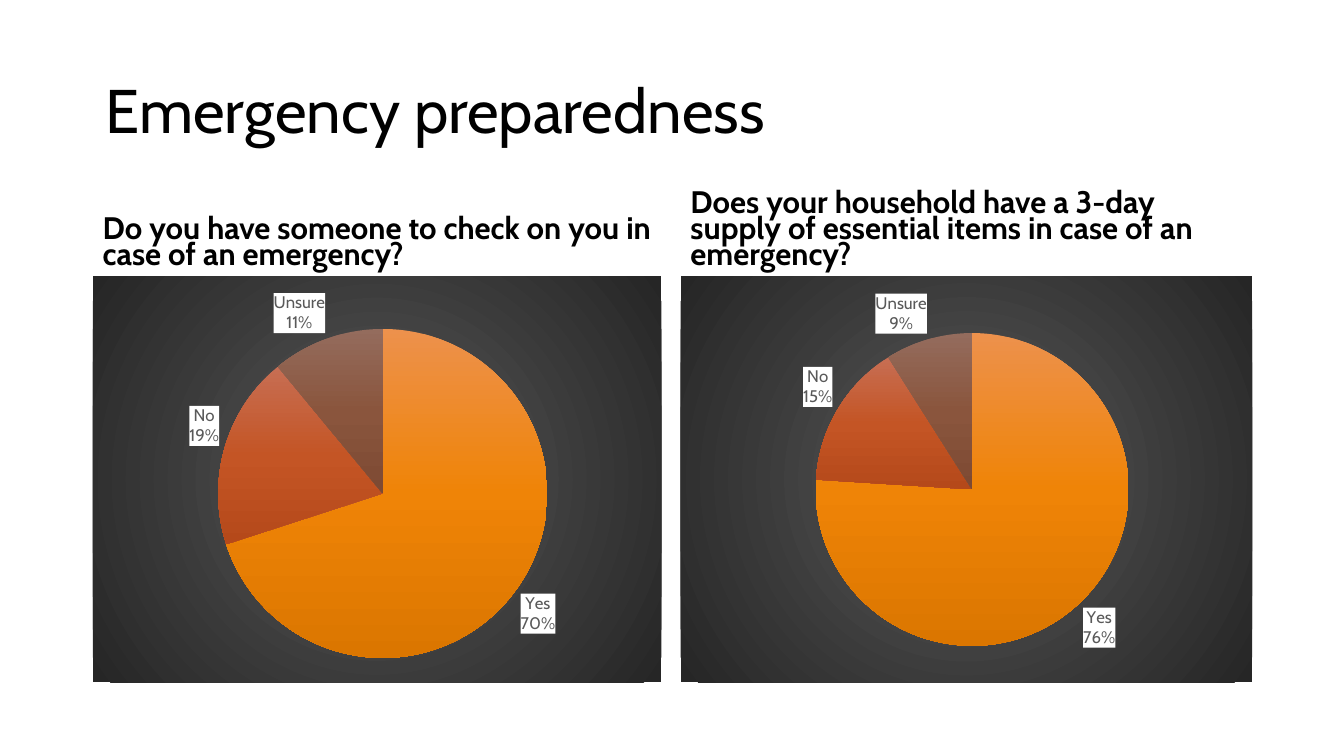
from lxml import etree
from pptx import Presentation
from pptx.chart.data import CategoryChartData
from pptx.dml.color import RGBColor
from pptx.enum.chart import XL_CHART_TYPE, XL_LABEL_POSITION
from pptx.enum.text import MSO_ANCHOR
from pptx.oxml import parse_xml
from pptx.util import Inches, Pt

PIE = XL_CHART_TYPE.PIE
OUTSIDE_END = XL_LABEL_POSITION.OUTSIDE_END
MIDDLE = MSO_ANCHOR.MIDDLE
BOTTOM = MSO_ANCHOR.BOTTOM
FONT = "Cabin"
NAMESPACES = (
    'xmlns:a="http://schemas.openxmlformats.org/drawingml/2006/main" '
    'xmlns:c="http://schemas.openxmlformats.org/drawingml/2006/chart"'
)
LINEAR = '<a:lin ang="5400000" scaled="0"/>'
CIRCLE = '<a:path path="circle"><a:fillToRect l="50000" t="50000" r="50000" b="50000"/></a:path>'
SLICE_COLORS = [
    ["ED914C", "EF8407", "DB7600"],
    ["C76E53", "C45525", "B5491A"],
    ["946C5D", "8A553D", "7D4A33"],
]
PANELS = [
    {
        "question": "Do you have someone to check on you in case of an emergency?",
        "left": 0.92, "width": 5.64, "values": (70, 19, 11),
        "plot": {"x": 0.22, "y": 0.13, "w": 0.58, "h": 0.81},
    },
    {
        "question": "Does your household have a 3-day supply of essential items in case of an emergency?",
        "left": 6.75, "width": 5.67, "values": (76, 15, 9),
        "plot": {"x": 0.235, "y": 0.14, "w": 0.55, "h": 0.77},
    },
]


def style_font(font, size, color, bold=False):
    font.name = FONT
    font.size = Pt(size)
    font.bold = bold
    font.color.rgb = RGBColor.from_string(color)


def gradient(colors, direction):
    step = 100000 // (len(colors) - 1)
    stops = "".join(
        f'<a:gs pos="{index * step}"><a:srgbClr val="{color}"/></a:gs>'
        for index, color in enumerate(colors)
    )
    return f'<a:gradFill {NAMESPACES} rotWithShape="1"><a:gsLst>{stops}</a:gsLst>{direction}</a:gradFill>'


presentation = Presentation()
presentation.slide_width = Inches(13.33)
presentation.slide_height = Inches(7.5)
slide = presentation.slides.add_slide(presentation.slide_layouts[6])

texts = [("Emergency preparedness", 0.92, 0.4, 11.5, 1.45, 44, False, MIDDLE, 0.9, 0, 0.13, 0.13)]
for panel in PANELS:
    texts.append((panel["question"], panel["left"], 1.84, panel["width"], 0.9,
                  22.2, True, BOTTOM, 0.7, 10, 0.1, 0.05))

for text, left, top, width, height, size, bold, anchor, spacing, before, side, edge in texts:
    text_box = slide.shapes.add_textbox(Inches(left), Inches(top), Inches(width), Inches(height))
    text_frame = text_box.text_frame
    text_frame.word_wrap = True
    text_frame.vertical_anchor = anchor
    text_frame.margin_left = text_frame.margin_right = Inches(side)
    text_frame.margin_top = text_frame.margin_bottom = Inches(edge)
    text_frame.text = text
    paragraph = text_frame.paragraphs[0]
    paragraph.line_spacing = spacing
    paragraph.space_before = Pt(before)
    style_font(paragraph.runs[0].font, size, "000000", bold)

for panel in PANELS:
    chart_data = CategoryChartData()
    chart_data.categories = ["Yes", "No", "Unsure"]
    chart_data.add_series("Series 1", panel["values"])
    chart = slide.shapes.add_chart(
        PIE, Inches(panel["left"]), Inches(2.74), Inches(panel["width"]), Inches(4.03), chart_data
    ).chart
    chart.has_title = False
    chart.has_legend = False
    style_font(chart.font, 10, "000000")
    chart_space = chart.element
    chart_space.find("{*}txPr").addprevious(parse_xml(
        f'<c:spPr {NAMESPACES}>{gradient(["595959", "262626"], CIRCLE)}<a:ln><a:noFill/></a:ln></c:spPr>'
    ))

    plot_area = chart_space.find(".//{*}plotArea")
    layout = plot_area.find("{*}layout")
    if layout is not None:
        plot_area.remove(layout)
    sizes = "".join(f'<c:{key} val="{value}"/>' for key, value in panel["plot"].items())
    plot_area.insert(0, parse_xml(
        f'<c:layout {NAMESPACES}><c:manualLayout><c:layoutTarget val="inner"/>'
        f'<c:xMode val="edge"/><c:yMode val="edge"/>{sizes}</c:manualLayout></c:layout>'
    ))

    plot = chart.plots[0]
    plot.vary_by_categories = True
    for index, colors in enumerate(SLICE_COLORS):
        slice_format = plot.series[0].points[index].format
        slice_format.line.fill.background()
        slice_format._element.find("{*}spPr").insert(0, etree.fromstring(gradient(colors, LINEAR)))

    plot.has_data_labels = True
    labels = plot.data_labels
    labels.show_category_name = True
    labels.show_percentage = True
    labels.show_value = False
    labels.number_format = "0%"
    labels.number_format_is_linked = False
    labels.position = OUTSIDE_END
    style_font(labels.font, 12, "595959")
    labels._element.find("{*}txPr").addprevious(parse_xml(
        f'<c:spPr {NAMESPACES}><a:solidFill><a:srgbClr val="FFFFFF"/></a:solidFill></c:spPr>'
    ))
    labels._element.find("{*}showBubbleSize").addnext(parse_xml(
        f"<c:separator {NAMESPACES}>\n</c:separator>"
    ))

presentation.save("out.pptx")
